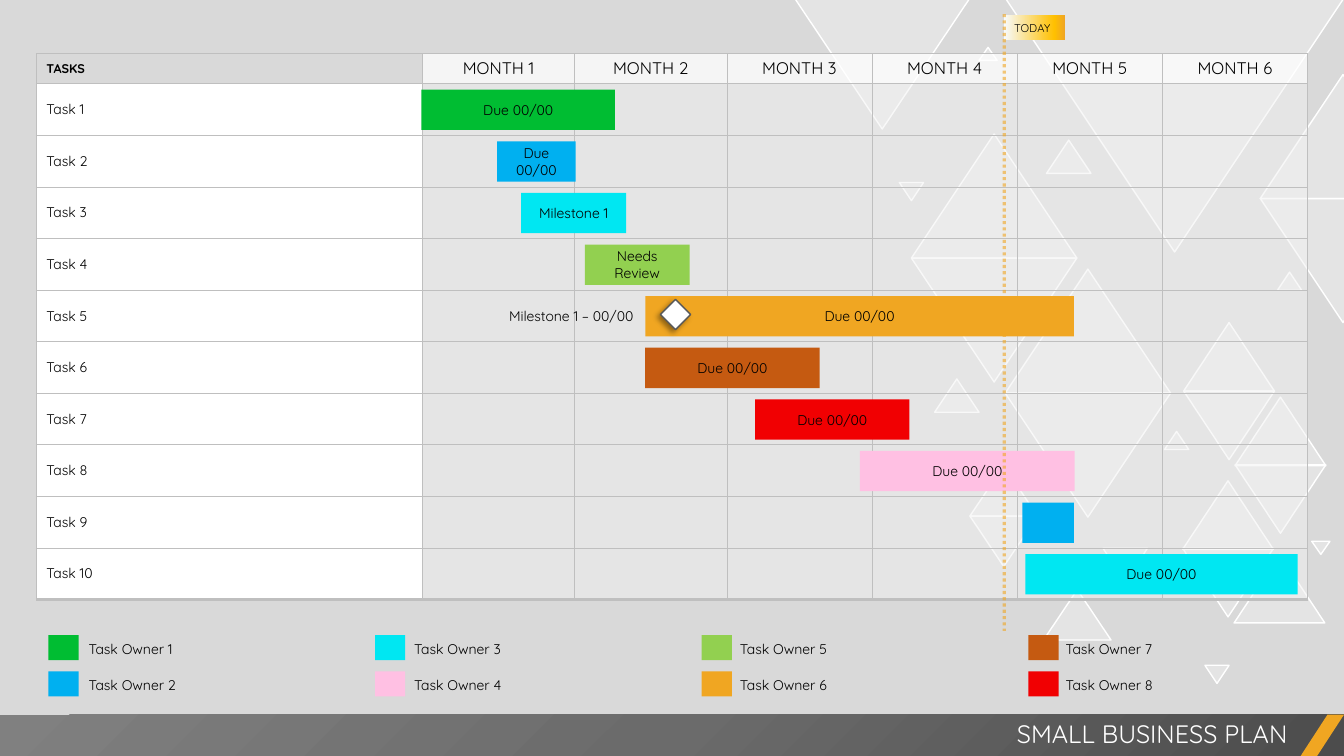
from lxml import etree
from pptx import Presentation
from pptx.dml.color import RGBColor
from pptx.enum.dml import MSO_LINE
from pptx.enum.shapes import MSO_CONNECTOR, MSO_SHAPE as SHAPE
from pptx.enum.text import MSO_ANCHOR as ANCHOR, MSO_AUTO_SIZE, PP_ALIGN as ALIGN
from pptx.oxml import parse_xml
from pptx.oxml.ns import nsdecls, qn
from pptx.util import Inches, Pt

FONT = "Quicksand"
BLACK, WHITE, GRID = "000000", "FFFFFF", "BFBFBF"
GREEN, BLUE, CYAN, LIME = "00BD32", "00B0F0", "00E7F2", "92D050"
ORANGE, BROWN, RED, PINK = "F0A622", "C55A11", "F10002", "FFC0E3"
TABLE_LEFT, TABLE_TOP, HEADER_HEIGHT, BODY_HEIGHT = 0.36, 0.53, 0.3, 5.12
COLUMN_WIDTHS = [3.83, 1.51, 1.51, 1.44, 1.44, 1.44, 1.44]
TASK_COUNT = 10
ROW_PITCH = BODY_HEIGHT / TASK_COUNT
BAR_TOP, BAR_HEIGHT = 0.89, 0.4
TODAY_LEFT = 9.96

TRIANGLES_UP = [
    (9.04, 1.33, 1.64, 1.23), (9.97, 2.67, 1.64, 1.23), (12.24, 5.5, 0.9, 0.68),
    (11.73, 4.77, 0.9, 0.68), (11.74, 3.2, 0.9, 0.68), (12.25, 3.94, 0.9, 0.68),
    (10.35, 5.85, 0.67, 0.5), (9.62, 4.62, 0.67, 0.5), (12.5, 0.74, 1.64, 1.23),
    (9.27, 3.76, 0.44, 0.33), (11.55, 4.28, 0.24, 0.18), (12.67, 2.7, 0.24, 0.18),
    (9.71, 0.47, 0.18, 0.13), (10.38, 1.39, 0.44, 0.33)]
TRIANGLES_DOWN = [
    (9.04, 2.56, 1.64, 1.23), (9.97, 3.9, 1.64, 1.23), (9.97, -0.02, 3.36, 2.52),
    (11.73, 5.44, 0.9, 0.68), (11.74, 3.88, 0.9, 0.68), (12.25, 4.61, 0.9, 0.68),
    (9.62, 5.12, 0.67, 0.5), (12.5, 1.97, 1.64, 1.23), (10.94, 5.44, 0.44, 0.33),
    (11.95, 6.6, 0.24, 0.18), (8.92, 1.81, 0.24, 0.18), (13.01, 5.37, 0.18, 0.13),
    (7.88, -0.02, 1.74, 1.3)]
TASK_BARS = [
    (4.18, 1.92, GREEN, "Due 00/00"), (4.93, 0.78, BLUE, "Due 00/00"),
    (5.17, 1.04, CYAN, "Milestone 1"), (5.8, 1.04, LIME, "Needs Review"),
    (6.4, 4.25, ORANGE, "Due 00/00"), (6.4, 1.73, BROWN, "Due 00/00"),
    (7.49, 1.53, RED, "Due 00/00"), (8.53, 2.13, PINK, "Due 00/00"),
    (10.14, 0.51, BLUE, ""), (10.17, 2.7, CYAN, "Due 00/00")]
OWNER_COLORS = [GREEN, BLUE, CYAN, PINK, LIME, ORANGE, BROWN, RED]


def rgb(color):
    """Turn a hex string into a colour."""
    return RGBColor.from_string(color)


def set_alpha(holder, percent):
    """Make the solid colour inside an XML element partly transparent."""
    color = holder.find(".//" + qn("a:srgbClr"))
    etree.SubElement(color, qn("a:alpha")).set("val", str(percent * 1000))


def write(frame, text, size=10, color=BLACK, align=ALIGN.LEFT, anchor=ANCHOR.MIDDLE, bold=False):
    """Write one formatted run into a text frame."""
    frame.word_wrap = True
    frame.vertical_anchor = anchor
    para = frame.paragraphs[0]
    para.alignment = align
    span = para.add_run()
    span.text = text
    font = span.font
    font.name, font.size, font.bold = FONT, Pt(size), bold
    font.color.rgb = rgb(color)


def add_figure(shapes, kind, place, fill, line=None):
    """Add a flat preset shape at left, top, width, height."""
    figure = shapes.add_shape(kind, *map(Inches, place))
    figure.shadow.inherit = False
    figure.fill.solid()
    figure.fill.fore_color.rgb = rgb(fill)
    if line:
        figure.line.color.rgb = rgb(line)
        figure.line.width = Pt(1)
    else:
        figure.line.fill.background()
    return figure


def add_label(shapes, place, text, **style):
    """Add a wrapped text box."""
    box = shapes.add_textbox(*map(Inches, place))
    write(box.text_frame, text, **style)


def set_gradient(figure, stops, shading):
    """Replace the solid fill of a shape by a gradient."""
    marks = "".join(f'<a:gs pos="{position * 1000}"><a:srgbClr val="{color}"/></a:gs>'
                    for position, color in stops)
    gradient = parse_xml(f'<a:gradFill {nsdecls("a")} rotWithShape="1">'
                         f'<a:gsLst>{marks}</a:gsLst>{shading}</a:gradFill>')
    properties = figure.element.spPr
    properties.replace(properties.find(qn("a:solidFill")), gradient)


def add_backdrop(slide):
    """Scatter the translucent triangles behind the chart."""
    shapes = slide.shapes.add_group_shape().shapes
    for places, rotation in ((TRIANGLES_UP, 0), (TRIANGLES_DOWN, 180)):
        for place in places:
            triangle = add_figure(shapes, SHAPE.ISOSCELES_TRIANGLE, place, WHITE, WHITE)
            triangle.rotation = rotation
            set_alpha(triangle.element.spPr.find(qn("a:solidFill")), 30)


def add_footer(slide):
    """Add the bottom band with its accent and the slide title."""
    band = add_figure(slide.shapes, SHAPE.RECTANGLE, (0, 7.09, 13.33, 0.41), "808080")
    set_gradient(band, [(0, "4C4C4C"), (50, "6B6B6B"), (100, "808080")],
                 '<a:path path="circle"><a:fillToRect l="100000" t="100000"/></a:path>')
    accent = add_figure(slide.shapes, SHAPE.PARALLELOGRAM, (12.9, 7.09, 0.43, 0.41), ORANGE)
    accent.adjustments[0] = 0.65
    title = slide.shapes.title
    title.left, title.top, title.width, title.height = map(Inches, (5.25, 7.08, 7.62, 0.4))
    title.text_frame.auto_size = MSO_AUTO_SIZE.NONE
    write(title.text_frame, "SMALL BUSINESS PLAN", 18, WHITE, ALIGN.RIGHT)
    title.element.getparent().append(title.element)


def style_cell(cell, fill, alpha, bottom=0.5):
    """Fill a table cell and draw its four borders."""
    cell.fill.solid()
    cell.fill.fore_color.rgb = rgb(fill)
    cell.margin_top = cell.margin_bottom = 0
    cell.vertical_anchor = ANCHOR.MIDDLE
    properties = cell.fill.fore_color and cell.text_frame._element.getparent().get_or_add_tcPr()
    set_alpha(properties, alpha)
    for index, (side, width) in enumerate((("L", 0.5), ("R", 0.5), ("T", 0.5), ("B", bottom))):
        properties.insert(index, parse_xml(
            f'<a:ln{side} {nsdecls("a")} w="{Pt(width)}"><a:solidFill>'
            f'<a:srgbClr val="{GRID}"/></a:solidFill></a:ln{side}>'))


def add_schedule(slide):
    """Add the table of tasks by month."""
    place = (TABLE_LEFT, TABLE_TOP, sum(COLUMN_WIDTHS), HEADER_HEIGHT + BODY_HEIGHT)
    table = slide.shapes.add_table(TASK_COUNT + 1, len(COLUMN_WIDTHS), *map(Inches, place)).table
    for column, width in zip(table.columns, COLUMN_WIDTHS):
        column.width = Inches(width)
    for number, row in enumerate(table.rows):
        row.height = Inches(ROW_PITCH if number else HEADER_HEIGHT)
        for month, cell in enumerate(row.cells):
            if month:
                fill, alpha = ("F2F2F2", 50) if number else (WHITE, 75)
            else:
                fill, alpha = (WHITE if number else "D9D9D9"), 100
            style_cell(cell, fill, alpha, 3 if number == TASK_COUNT else 0.5)
            if number == 0 and month:
                write(cell.text_frame, f"MONTH {month}", 12, align=ALIGN.CENTER)
            elif number == 0:
                write(cell.text_frame, "TASKS", 9, bold=True)
            elif month == 0:
                write(cell.text_frame, f"Task {number}")


def add_bars(slide):
    """Add one bar for each task."""
    for number, (left, width, color, text) in enumerate(TASK_BARS):
        place = (left, BAR_TOP + number * ROW_PITCH, width, BAR_HEIGHT)
        bar = add_figure(slide.shapes, SHAPE.RECTANGLE, place, color)
        if text:
            write(bar.text_frame, text, align=ALIGN.CENTER)


def add_legend(slide):
    """Add the task owners, two to a column."""
    for number, color in enumerate(OWNER_COLORS):
        column, row = divmod(number, 2)
        top = 6.3 + row * 0.36
        add_figure(slide.shapes, SHAPE.RECTANGLE, (0.48 + column * 3.24, top, 0.3, 0.25), color)
        add_label(slide.shapes, (0.78 + column * 3.23, top, 2.4, 0.27), f"Task Owner {number + 1}")


def add_today(slide):
    """Add the flag and dotted line that mark the current day."""
    shapes = slide.shapes.add_group_shape().shapes
    flag = add_figure(shapes, SHAPE.RECTANGLE, (TODAY_LEFT, 0.15, 0.6, 0.25), ORANGE)
    set_gradient(flag, [(0, "F7FAFD"), (83, "FFC000"), (100, ORANGE)], '<a:lin ang="0"/>')
    write(flag.text_frame, "TODAY", 8)
    ends = map(Inches, (TODAY_LEFT, 0.14, TODAY_LEFT, 6.26))
    marker = shapes.add_connector(MSO_CONNECTOR.STRAIGHT, *ends)
    marker.line.color.rgb = rgb(ORANGE)
    marker.line.width = Pt(2.25)
    marker.line.dash_style = MSO_LINE.ROUND_DOT
    set_alpha(marker.element.spPr, 60)
    etree.SubElement(marker.element.spPr, qn("a:effectLst"))


def add_milestone(slide):
    """Add the milestone diamond and its label."""
    diamond = add_figure(slide.shapes, SHAPE.DIAMOND, (6.55, 2.97, 0.3, 0.3), WHITE, "595959")
    diamond.element.spPr.find(qn("a:effectLst")).append(parse_xml(
        f'<a:outerShdw {nsdecls("a")} blurRad="{Pt(4)}" dist="{Pt(3)}" dir="8100000">'
        f'<a:srgbClr val="{BLACK}"><a:alpha val="40000"/></a:srgbClr></a:outerShdw>'))
    add_label(slide.shapes, (4.21, 2.93, 2.17, 0.4), "Milestone 1 – 00/00", align=ALIGN.RIGHT)


def main():
    """Build the Gantt chart slide and save it."""
    deck = Presentation()
    deck.slide_width, deck.slide_height = Inches(13.33), Inches(7.5)
    page = deck.slides.add_slide(deck.slide_layouts[5])
    page.background.fill.solid()
    page.background.fill.fore_color.rgb = rgb("D9D9D9")
    for add_part in (add_backdrop, add_footer, add_schedule, add_bars,
                     add_legend, add_today, add_milestone):
        add_part(page)
    deck.save("out.pptx")


if __name__ == "__main__":
    main()
